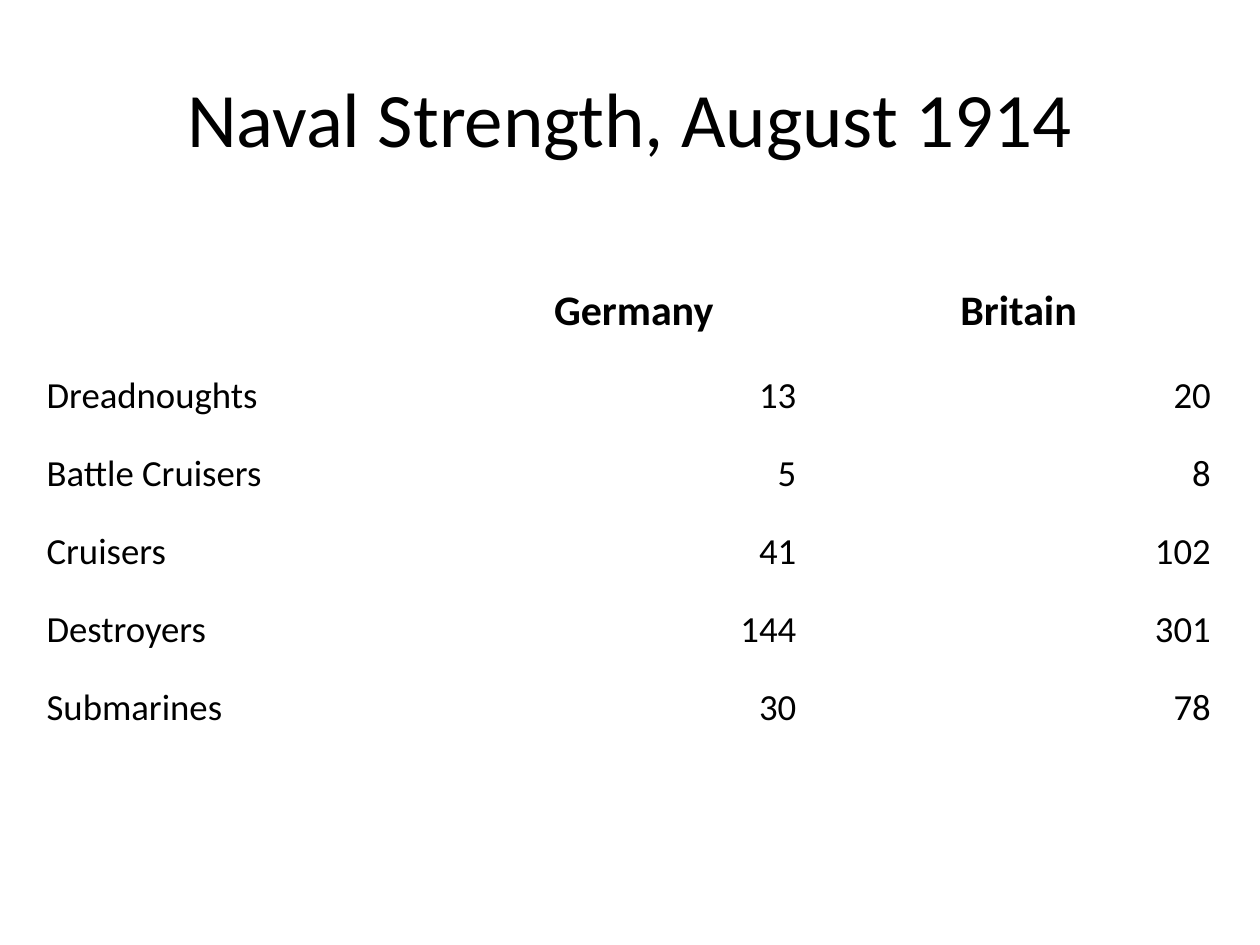
"""Build a slide with a table of naval strength in August 1914."""
from pptx import Presentation
from pptx.dml.color import RGBColor
from pptx.enum.text import MSO_ANCHOR as Anchor, PP_ALIGN as Align
from pptx.util import Inches, Pt

BLACK = RGBColor(0, 0, 0)
FONT = "Calibri"
ROWS = [
    ("", "Germany", "Britain"),
    ("Dreadnoughts", "13", "20"),
    ("Battle Cruisers", "5", "8"),
    ("Cruisers", "41", "102"),
    ("Destroyers", "144", "301"),
    ("Submarines", "30", "78"),
]
WIDTHS = (3.37, 2.82, 3.29)
HEAD, LINE = 1.08, 0.62


def write(frame, text, size=21, bold=False, align=Align.LEFT):
    para = frame.paragraphs[0]
    para.alignment = align
    run = para.add_run()
    run.text = text
    font = run.font
    font.name, font.size, font.bold = FONT, Pt(size), bold
    font.color.rgb = BLACK


deck = Presentation()
deck.slide_width, deck.slide_height = Inches(10), Inches(7.5)
slide = deck.slides.add_slide(deck.slide_layouts[5])

title = slide.shapes.title
title.left, title.top = Inches(0.5), Inches(0.3)
title.width, title.height = Inches(9), Inches(1.25)
title.text_frame.vertical_anchor = Anchor.MIDDLE
write(title.text_frame, "Naval Strength, August 1914", size=44, align=Align.CENTER)

high = HEAD + LINE * (len(ROWS) - 1)
frame = slide.shapes.add_table(
    len(ROWS), len(WIDTHS), Inches(0.25), Inches(1.75), Inches(sum(WIDTHS)), Inches(high)
)
table = frame.table
table.first_row = table.horz_banding = False
for col, width in zip(table.columns, WIDTHS):
    col.width = Inches(width)

for r, row in enumerate(ROWS):
    head = r == 0
    table.rows[r].height = Inches(HEAD if head else LINE)
    for c, text in enumerate(row):
        cell = table.cell(r, c)
        cell.fill.background()
        cell.margin_left = cell.margin_right = Inches(0.12)
        cell.margin_top = Inches(0.06)
        cell.margin_bottom = Inches(0.16 if head else 0.06)
        cell.vertical_anchor = Anchor.BOTTOM if head else Anchor.MIDDLE
        if head and text:
            write(cell.text_frame, text, size=24, bold=True, align=Align.CENTER)
        elif text:
            write(cell.text_frame, text, align=Align.RIGHT if c else Align.LEFT)

deck.save("out.pptx")
